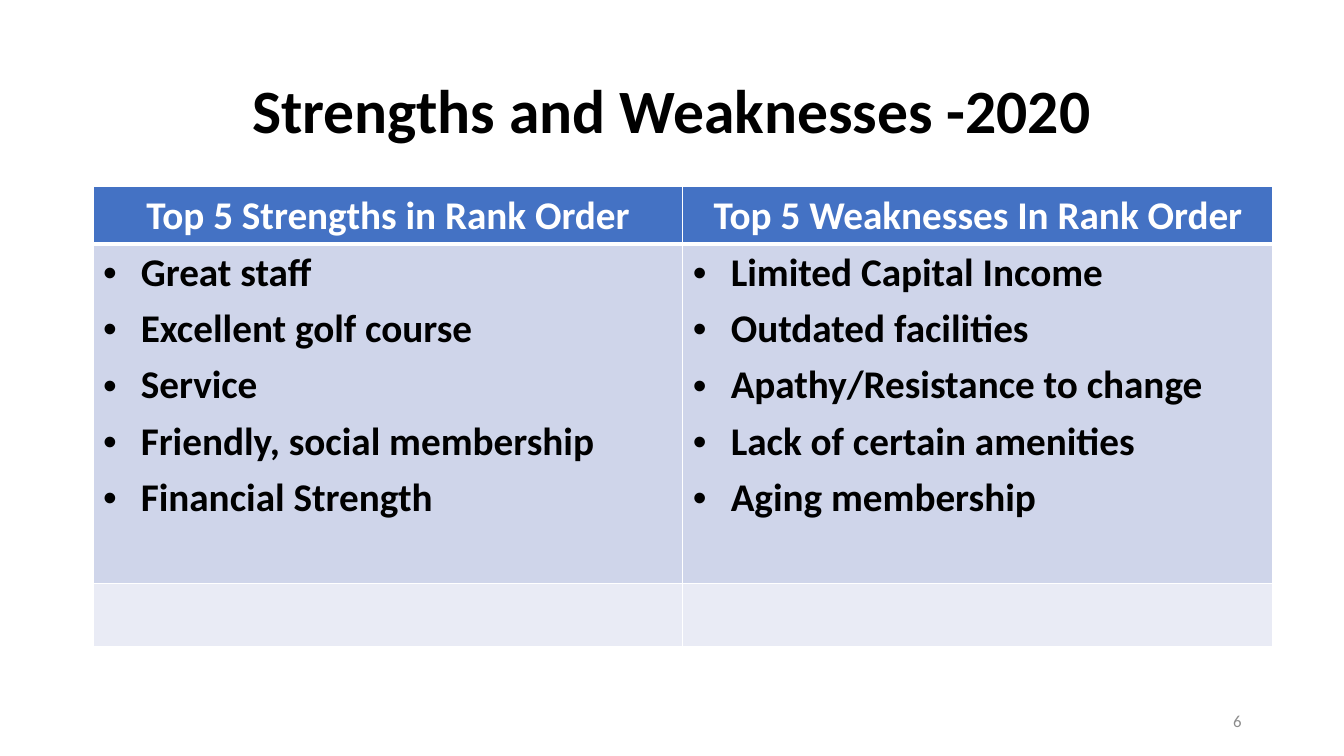
from lxml.etree import SubElement
from pptx import Presentation
from pptx.dml.color import RGBColor
from pptx.enum.text import MSO_ANCHOR as Anchor, PP_ALIGN as Align
from pptx.oxml.ns import qn
from pptx.util import Pt

FONT = "Calibri"
COLORS = {
    "ink": "000000",
    "white": "FFFFFF",
    "header": "4472C4",
    "band": "CFD5EA",
    "light_band": "E9EBF5",
    "page_number": "8C8C8C",
}
STRENGTHS = ["Great staff", "Excellent golf course", "Service",
             "Friendly, social membership", "Financial Strength"]
WEAKNESSES = ["Limited Capital Income", "Outdated facilities",
              "Apathy/Resistance to change", "Lack of certain amenities",
              "Aging membership"]
RANKINGS = [("Top 5 Strengths in Rank Order", STRENGTHS),
            ("Top 5 Weaknesses In Rank Order", WEAKNESSES)]
ROW_HEIGHTS = [40.7, 242.3, 45.4]
ROW_FILLS = ["header", "band", "light_band"]


def color(name):
    return RGBColor.from_string(COLORS[name])


def style(paragraph, size, ink, bold=False, align=Align.LEFT):
    paragraph.alignment = align
    for run in paragraph.runs:
        run.font.name = FONT
        run.font.size = Pt(size)
        run.font.bold = bold
        run.font.color.rgb = color(ink)


def add_bullet(paragraph, indent=27):
    properties = paragraph._p.get_or_add_pPr()
    properties.set("marL", str(Pt(indent)))
    properties.set("indent", str(-Pt(indent)))
    SubElement(properties, qn("a:buFont"), typeface="Arial")
    SubElement(properties, qn("a:buChar"), char="•")


def add_borders(cell, bottom_width):
    properties = cell._tc.get_or_add_tcPr()
    for side, width in (("L", 1), ("R", 1), ("T", 1), ("B", bottom_width)):
        line = SubElement(properties, qn(f"a:ln{side}"), w=str(Pt(width)))
        fill = SubElement(line, qn("a:solidFill"))
        SubElement(fill, qn("a:srgbClr"), val=COLORS["white"])


def add_label(slide, box, text, size, ink, bold, align):
    frame = slide.shapes.add_textbox(*map(Pt, box)).text_frame
    frame.word_wrap = True
    frame.vertical_anchor = Anchor.MIDDLE
    frame.text = text
    style(frame.paragraphs[0], size, ink, bold, align)
    return frame.paragraphs[0]


def add_title(slide, box):
    title = add_label(slide, box, "Strengths and Weaknesses -2020",
                      44, "ink", True, Align.CENTER)
    title.line_spacing = 0.9


def add_rankings(slide, box):
    rankings = slide.shapes.add_table(
        len(ROW_HEIGHTS), len(RANKINGS), *map(Pt, box)).table
    for row, height, fill in zip(rankings.rows, ROW_HEIGHTS, ROW_FILLS):
        row.height = Pt(height)
        for cell in row.cells:
            add_borders(cell, 3 if fill == "header" else 1)
            cell.fill.solid()
            cell.fill.fore_color.rgb = color(fill)

    for column, (heading, items) in enumerate(RANKINGS):
        rankings.columns[column].width = Pt(box[2] / len(RANKINGS))
        # Heading
        header = rankings.cell(0, column).text_frame
        header.text = heading
        style(header.paragraphs[0], 28, "white", True, Align.CENTER)
        # Ranked items
        ranked = rankings.cell(1, column).text_frame
        ranked.text = "\n".join(items)
        for item in ranked.paragraphs:
            style(item, 28, "ink", True)
            item.space_after = Pt(6)
            add_bullet(item)


def add_page_number(slide, box):
    add_label(slide, box, "6", 12, "page_number", False, Align.RIGHT)


def main():
    deck = Presentation()
    deck.slide_width, deck.slide_height = Pt(960), Pt(540)
    slide = deck.slides.add_slide(deck.slide_layouts[6])
    add_title(slide, (66, 28.8, 828, 104.4))
    add_rankings(slide, (66.4, 133.4, 842.8, sum(ROW_HEIGHTS)))
    add_page_number(slide, (678, 500.5, 216, 28.8))
    deck.save("out.pptx")


if __name__ == "__main__":
    main()
